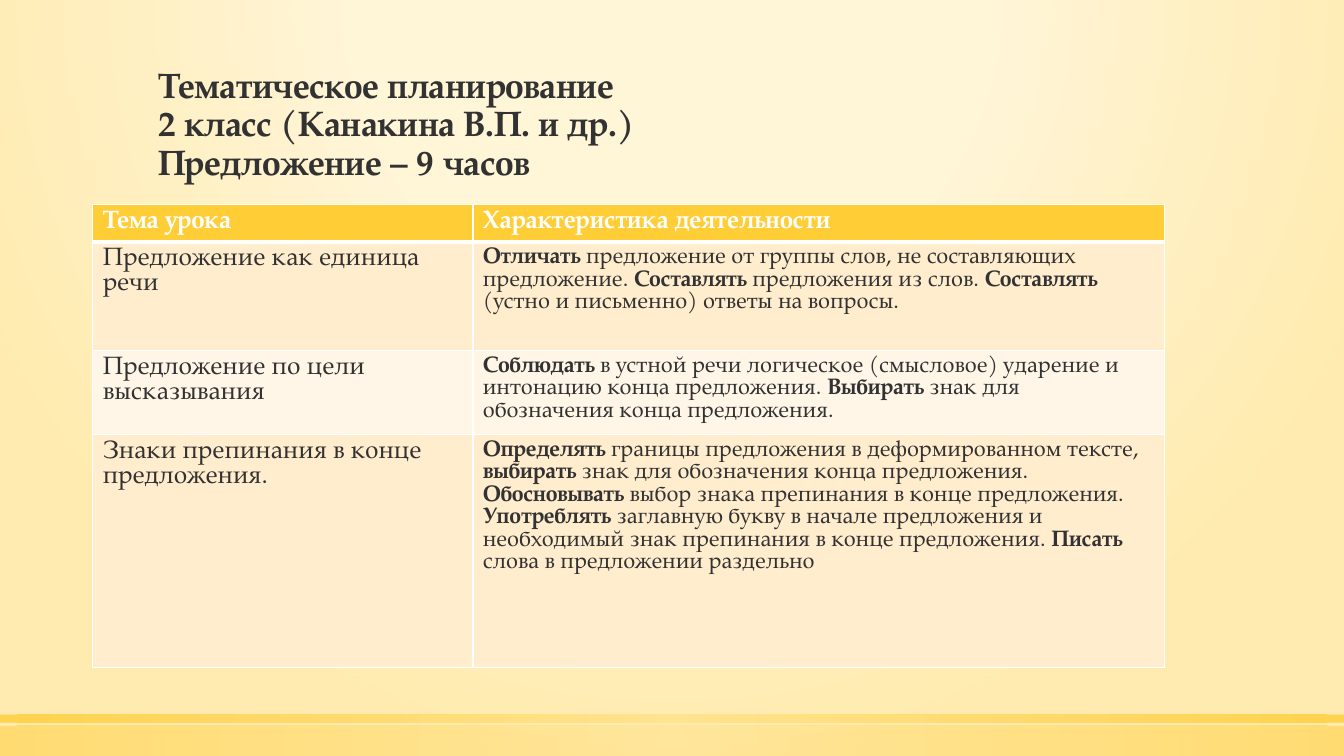
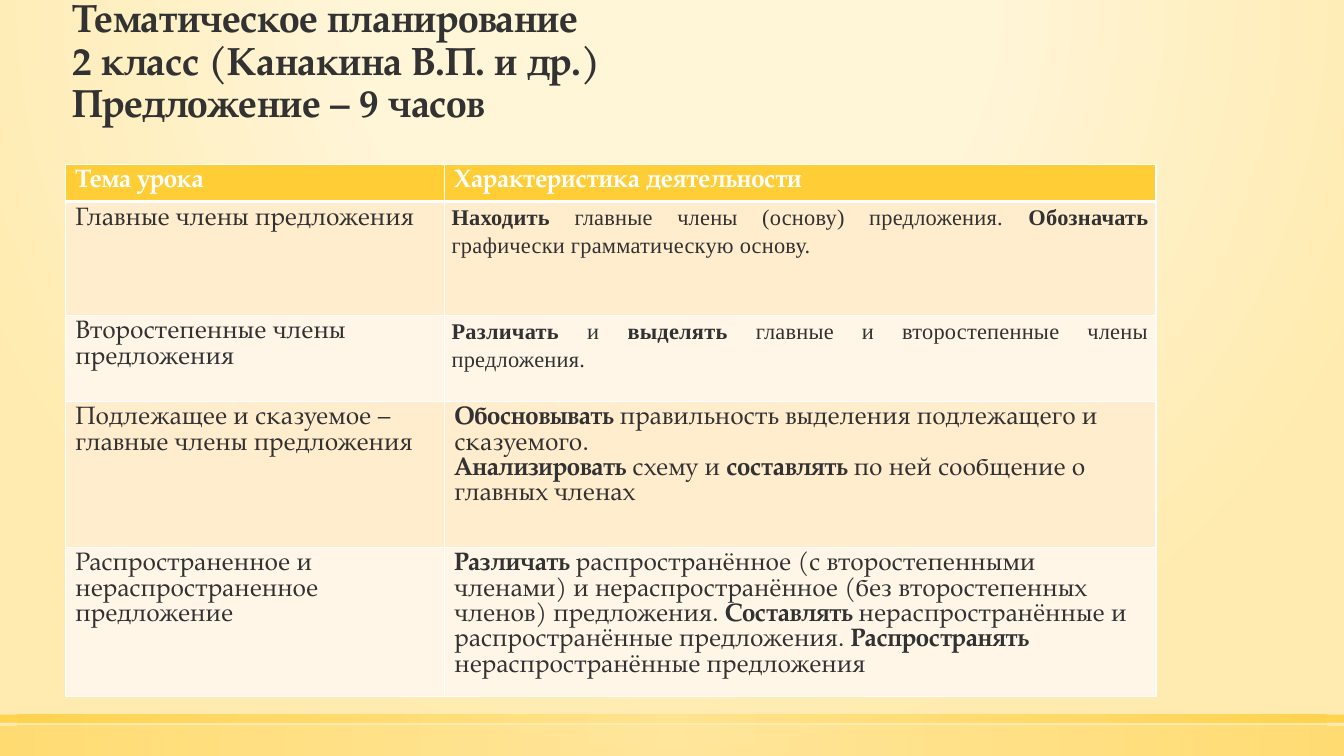
"""Build two lesson-planning slides, each with a title and a table of topics."""
from dataclasses import dataclass

from lxml import etree
from pptx import Presentation
from pptx.dml.color import RGBColor
from pptx.enum.shapes import MSO_SHAPE
from pptx.enum.text import MSO_ANCHOR, MSO_AUTO_SIZE, PP_ALIGN
from pptx.oxml.ns import qn
from pptx.slide import Slide
from pptx.table import _Cell
from pptx.util import Cm, Pt

RECTANGLE = MSO_SHAPE.RECTANGLE
BOTTOM = MSO_ANCHOR.BOTTOM
TOP = MSO_ANCHOR.TOP
NO_AUTOFIT = MSO_AUTO_SIZE.NONE
LEFT = PP_ALIGN.LEFT
JUSTIFY = PP_ALIGN.JUSTIFY

COLORS = {
    "text": "323232",
    "white": "FFFFFF",
    "header": "FFCD36",
    "odd_row": "FFEDCE",
    "even_row": "FFF6E8",
    "cream": "FFF5D7",
    "sand": "FFEBAF",
    "light_gold": "FFE186",
}
SLIDE_WIDTH, SLIDE_HEIGHT = 33.87, 19.05
SERIF = "TeX Gyre Pagella"
HEADING = "Тематическое планирование\v2 класс (Канакина В.П. и др.)\vПредложение – 9 часов"
COLUMN_NAMES = ("*Тема урока*", "*Характеристика деятельности*")


@dataclass(frozen=True)
class TextStyle:
    font: str
    size: float
    line_spacing: float = 1.0
    align: PP_ALIGN = LEFT
    margin_x: float = 0.25
    margin_y: float = 0.13
    letter_spacing: float = 0


@dataclass(frozen=True)
class Stop:
    position: int
    color: str
    opacity: int = 100


@dataclass(frozen=True)
class Band:
    top: float
    height: float
    opacity: int


@dataclass(frozen=True)
class Lesson:
    topic: str
    activity: str
    style: TextStyle
    height: float


@dataclass(frozen=True)
class Plan:
    title_box: tuple[float, float, float, float]
    title_size: float
    table_left: float
    table_top: float
    column_widths: tuple[float, float]
    lessons: tuple[Lesson, ...]


TOPIC = TextStyle(SERIF, 18)
COMPACT = TextStyle(SERIF, 16)
JUSTIFIED = TextStyle("Times New Roman", 16, 1.15, JUSTIFY, 0.18, 0, 0.2)
HEADER_HEIGHT = 0.94
BANDS = (Band(18.29, 0.76, 50), Band(18.01, 0.2, 80))

PLANS = (
    Plan((3.73, 1.3, 26.42, 3.43), 25.2, 2.34, 5.16, (9.58, 17.42), (
        Lesson(
            "Предложение как единица речи",
            "*Отличать* предложение от группы слов, не составляющих предложение. "
            "*Составлять* предложения из слов. *Составлять* (устно и письменно) "
            "ответы на вопросы.",
            COMPACT, 2.74),
        Lesson(
            "Предложение по цели высказывания",
            "*Соблюдать* в устной речи логическое (смысловое) ударение и интонацию "
            "конца предложения. *Выбирать* знак для обозначения конца предложения.",
            COMPACT, 2.11),
        Lesson(
            "Знаки препинания в конце предложения.",
            "*Определять* границы предложения в деформированном тексте, *выбирать* "
            "знак для обозначения конца предложения. *Обосновывать* выбор знака "
            "препинания в конце предложения.\n"
            "*Употреблять* заглавную букву в начале предложения и необходимый знак "
            "препинания в конце предложения. *Писать* слова в предложении раздельно",
            COMPACT, 5.87),
    )),
    Plan((1.57, 0.61, 28.96, 2.69), 28, 1.65, 4.14, (9.55, 17.93), (
        Lesson(
            "Главные члены предложения",
            "*Находить* главные члены (основу) предложения. *Обозначать* "
            "графически грамматическую основу.",
            JUSTIFIED, 2.87),
        Lesson(
            "Второстепенные члены предложения",
            "*Различать* и *выделять* главные и второстепенные члены предложения.",
            JUSTIFIED, 2.16),
        Lesson(
            "Подлежащее и сказуемое – главные члены предложения",
            "*Обосновывать* правильность выделения подлежащего и сказуемого.\n"
            "*Анализировать* схему и *составлять* по ней сообщение о главных членах",
            TOPIC, 3.68),
        Lesson(
            "Распространенное и нераспространенное предложение",
            "*Различать* распространённое (с второстепенными членами) и "
            "нераспространённое (без второстепенных членов) предложения. "
            "*Составлять* нераспространённые и распространённые предложения. "
            "*Распространять* нераспространённые предложения",
            TOPIC, 3.76),
    )),
)


def rgb(name: str) -> RGBColor:
    return RGBColor.from_string(COLORS[name])


def set_radial_gradient(gradient: etree._Element, stops: tuple[Stop, ...],
                        focus_top: int, focus_bottom: int) -> None:
    for child in list(gradient):
        gradient.remove(child)
    stop_list = etree.SubElement(gradient, qn("a:gsLst"))
    for stop in stops:
        mark = etree.SubElement(stop_list, qn("a:gs"), pos=str(stop.position * 1000))
        color = etree.SubElement(mark, qn("a:srgbClr"), val=COLORS[stop.color])
        if stop.opacity < 100:
            etree.SubElement(color, qn("a:alpha"), val=str(stop.opacity * 1000))
    circle = etree.SubElement(gradient, qn("a:path"))
    circle.set("path", "circle")
    etree.SubElement(circle, qn("a:fillToRect"), l="50000", r="50000",
                     t=str(focus_top * 1000), b=str(focus_bottom * 1000))


def draw_band(slide: Slide, band: Band) -> None:
    strip = slide.shapes.add_shape(
        RECTANGLE, 0, Cm(band.top), Cm(SLIDE_WIDTH), Cm(band.height))
    strip.shadow.inherit = False
    strip.line.fill.background()
    strip.fill.gradient()
    set_radial_gradient(
        strip.element.spPr.find(qn("a:gradFill")),
        (Stop(0, "light_gold", band.opacity), Stop(100, "header", band.opacity)), 50, 50)


def set_title(slide: Slide, plan: Plan) -> None:
    title = slide.shapes.title
    title.left, title.top, title.width, title.height = map(Cm, plan.title_box)
    frame = title.text_frame
    frame.word_wrap = True
    frame.auto_size = NO_AUTOFIT
    frame.vertical_anchor = BOTTOM
    frame.text = HEADING
    heading = frame.paragraphs[0]
    heading.alignment = LEFT
    heading.line_spacing = 0.9
    heading.font.name = SERIF
    heading.font.size = Pt(plan.title_size)
    heading.font.bold = True
    heading.font.color.rgb = rgb("text")


def set_borders(cell: _Cell, bottom_width: float) -> None:
    properties = cell._tc.get_or_add_tcPr()
    for side, width in (("L", 1), ("R", 1), ("T", 1), ("B", bottom_width)):
        edge = etree.SubElement(properties, qn(f"a:ln{side}"), w=str(Pt(width)))
        fill = etree.SubElement(edge, qn("a:solidFill"))
        etree.SubElement(fill, qn("a:srgbClr"), val=COLORS["white"])


def fill_cell(cell: _Cell, text: str, style: TextStyle, fill: str,
              ink: str = "text", bottom_width: float = 1) -> None:
    set_borders(cell, bottom_width)
    cell.fill.solid()
    cell.fill.fore_color.rgb = rgb(fill)
    cell.margin_left = cell.margin_right = Cm(style.margin_x)
    cell.margin_top = cell.margin_bottom = Cm(style.margin_y)
    cell.vertical_anchor = TOP
    frame = cell.text_frame
    for index, line in enumerate(text.split("\n")):
        paragraph = frame.add_paragraph() if index else frame.paragraphs[0]
        paragraph.alignment = style.align
        paragraph.line_spacing = style.line_spacing
        paragraph.font.name = style.font
        paragraph.font.size = Pt(style.size)
        paragraph.font.color.rgb = rgb(ink)
        for part, words in enumerate(line.split("*")):
            if words:
                run = paragraph.add_run()
                run.text = words
                run.font.bold = part % 2 == 1
                if style.letter_spacing:
                    run._r.get_or_add_rPr().set("spc", str(round(style.letter_spacing * 100)))


def draw_lessons(slide: Slide, plan: Plan) -> None:
    heights = (HEADER_HEIGHT, *(lesson.height for lesson in plan.lessons))
    table = slide.shapes.add_table(
        len(heights), len(COLUMN_NAMES), Cm(plan.table_left), Cm(plan.table_top),
        Cm(sum(plan.column_widths)), Cm(sum(heights))).table
    for column, width in zip(table.columns, plan.column_widths):
        column.width = Cm(width)
    for row, height in zip(table.rows, heights):
        row.height = Cm(height)
    for index, name in enumerate(COLUMN_NAMES):
        fill_cell(table.cell(0, index), name, TOPIC, "header", "white", 3)
    for index, lesson in enumerate(plan.lessons, start=1):
        fill = "odd_row" if index % 2 else "even_row"
        fill_cell(table.cell(index, 0), lesson.topic, TOPIC, fill)
        fill_cell(table.cell(index, 1), lesson.activity, lesson.style, fill)


def main() -> None:
    deck = Presentation()
    deck.slide_width, deck.slide_height = Cm(SLIDE_WIDTH), Cm(SLIDE_HEIGHT)
    master = deck.slide_master
    master.background.fill.gradient()
    set_radial_gradient(
        master.element.find(f".//{qn('p:bgPr')}/{qn('a:gradFill')}"),
        (Stop(0, "cream", 59), Stop(40, "cream", 66), Stop(100, "sand")), -80, 180)
    for plan in PLANS:
        slide = deck.slides.add_slide(deck.slide_layouts[5])
        for band in BANDS:
            draw_band(slide, band)
        set_title(slide, plan)
        draw_lessons(slide, plan)
    deck.save("out.pptx")


if __name__ == "__main__":
    main()
